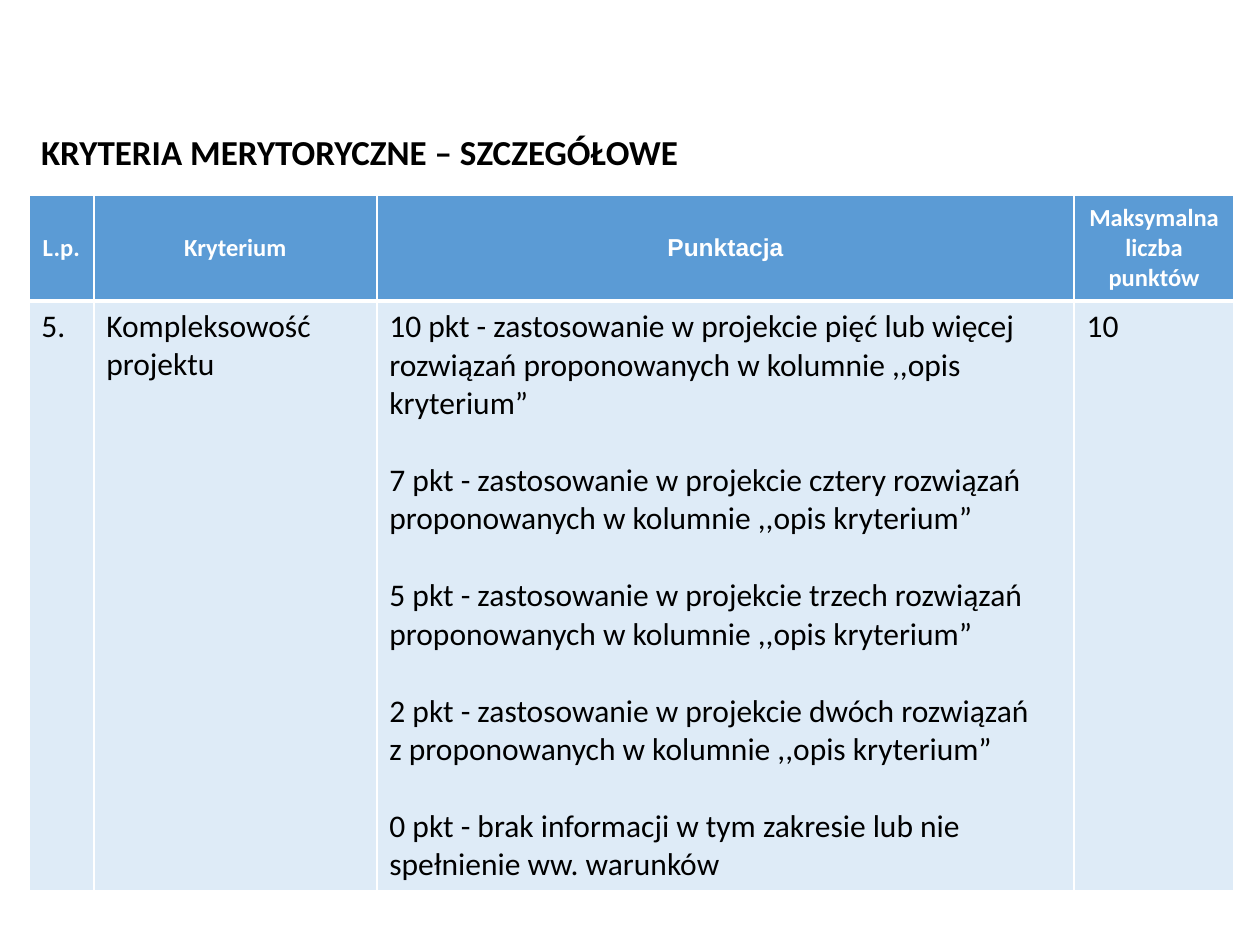
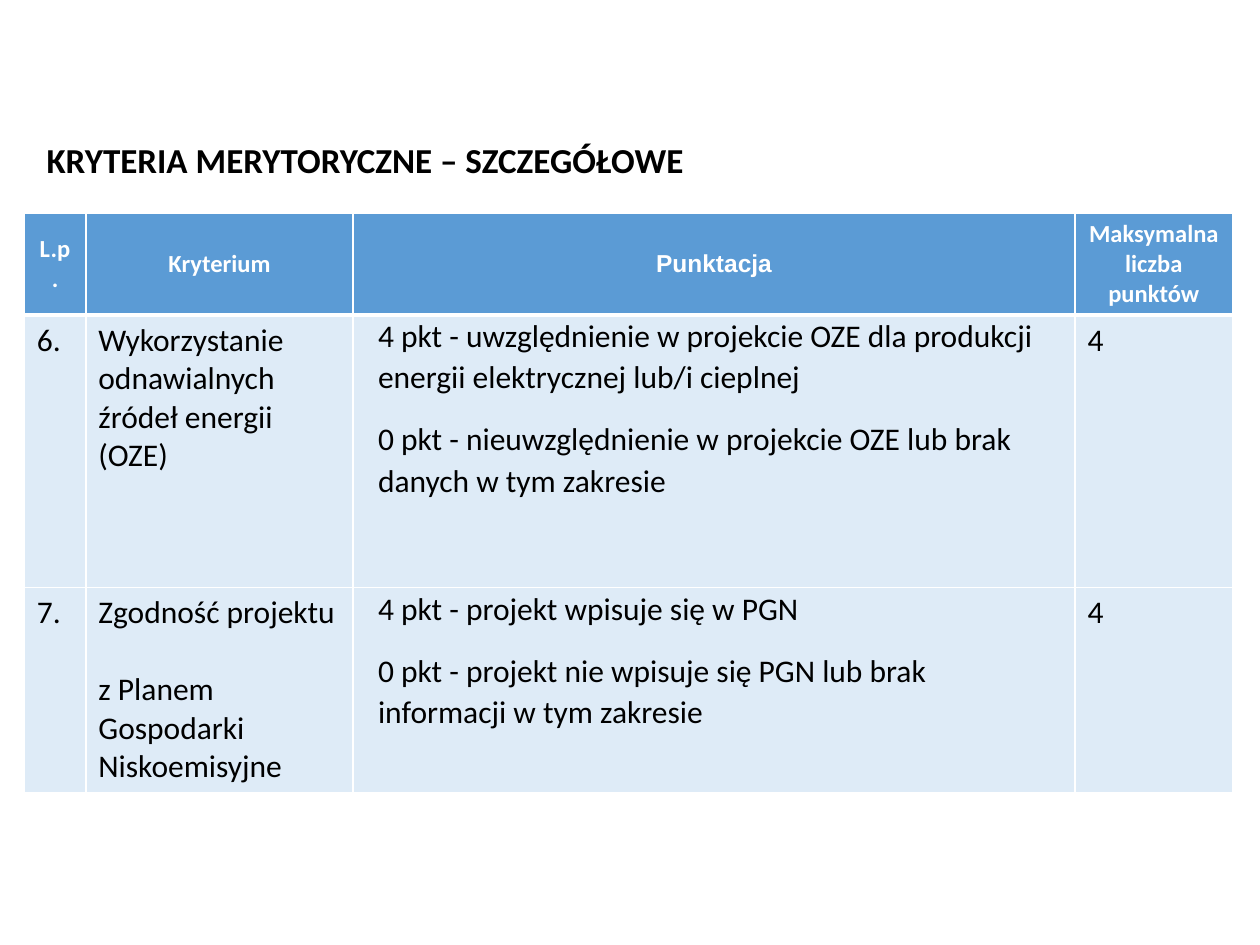
from lxml.etree import SubElement
from pptx import Presentation
from pptx.dml.color import RGBColor
from pptx.enum.text import MSO_ANCHOR, MSO_AUTO_SIZE, PP_ALIGN
from pptx.oxml.ns import qn
from pptx.util import Cm, Pt

WHITE = RGBColor(0xFF, 0xFF, 0xFF)
BLACK = RGBColor(0x00, 0x00, 0x00)
HEADER_BLUE = RGBColor(0x5B, 0x9B, 0xD5)
BODY_BLUE = RGBColor(0xDE, 0xEB, 0xF7)

TITLE = "KRYTERIA MERYTORYCZNE – SZCZEGÓŁOWE"
HEADERS = ["L.p.", "Kryterium", "Punktacja", "Maksymalna liczba punktów"]
SCORING_COLUMN = HEADERS.index("Punktacja")
BLANK_LINE = 22

PAGES = [
    {
        "title": (0.58, 2.49, 13.77),
        "table": (0.58, 3.94),
        "columns": [1.31, 5.71, 14.05, 3.23],
        "heights": [2.13, 11.86],
        "scoring": {"margins": (0.25, 0.13), "spacing": 1.0, "gap": BLANK_LINE},
        "rows": [
            [
                ["5."],
                ["Kompleksowość projektu"],
                [
                    "10 pkt - zastosowanie w projekcie pięć lub więcej\v"
                    "rozwiązań proponowanych w kolumnie ,,opis\vkryterium”",
                    "7 pkt - zastosowanie w projekcie cztery rozwiązań\v"
                    "proponowanych w kolumnie ,,opis kryterium”",
                    "5 pkt - zastosowanie w projekcie trzech rozwiązań\v"
                    "proponowanych w kolumnie ,,opis kryterium”",
                    "2 pkt - zastosowanie w projekcie dwóch rozwiązań\v"
                    "z proponowanych w kolumnie ,,opis kryterium”",
                    "0 pkt - brak informacji w tym zakresie lub nie\v"
                    "spełnienie ww. warunków",
                ],
                ["10"],
            ],
        ],
    },
    {
        "title": (0.69, 2.67, 13.46),
        "table": (0.49, 4.29),
        "columns": [1.24, 5.39, 14.55, 3.18],
        "heights": [2.06, 5.49, 4.14],
        "scoring": {"margins": (0.5, 0), "spacing": 1.07, "gap": 12},
        "rows": [
            [
                ["6."],
                ["Wykorzystanie odnawialnych źródeł energii (OZE)"],
                [
                    "4 pkt - uwzględnienie w projekcie OZE dla produkcji\v"
                    "energii elektrycznej lub/i cieplnej",
                    "0 pkt - nieuwzględnienie w projekcie OZE lub brak\v"
                    "danych w tym zakresie",
                ],
                ["4"],
            ],
            [
                ["7."],
                ["Zgodność projektu", "z Planem Gospodarki Niskoemisyjne"],
                [
                    "4 pkt - projekt wpisuje się w PGN",
                    "0 pkt - projekt nie wpisuje się PGN lub brak\v"
                    "informacji w tym zakresie",
                ],
                ["4"],
            ],
        ],
    },
]


def set_font(paragraph, size, color, bold, name="Calibri"):
    font = paragraph.font
    font.size = Pt(size)
    font.bold = bold
    font.name = name
    font.color.rgb = color


def set_borders(cell, top, bottom):
    properties = cell._tc.get_or_add_tcPr()
    for side, width in (("L", 1), ("R", 1), ("T", top), ("B", bottom)):
        line = SubElement(properties, qn(f"a:ln{side}"), w=str(Pt(width)))
        fill = SubElement(line, qn("a:solidFill"))
        SubElement(fill, qn("a:srgbClr"), val=str(WHITE))


deck = Presentation()
deck.slide_width = Cm(25.4)
deck.slide_height = Cm(19.05)

for content in PAGES:
    page = deck.slides.add_slide(deck.slide_layouts[6])

    left, top = content["table"]
    rows = [[[header] for header in HEADERS]] + content["rows"]
    frame = page.shapes.add_table(
        len(rows), len(HEADERS), Cm(left), Cm(top),
        Cm(sum(content["columns"])), Cm(sum(content["heights"])))
    table = frame.table
    for column, width in zip(table.columns, content["columns"]):
        column.width = Cm(width)
    for row, height in zip(table.rows, content["heights"]):
        row.height = Cm(height)

    for row_index, row_texts in enumerate(rows):
        is_header = row_index == 0
        for column_index, texts in enumerate(row_texts):
            is_scoring = column_index == SCORING_COLUMN
            cell = table.cell(row_index, column_index)
            set_borders(cell, 3 if row_index == 1 else 1, 3 if is_header else 1)
            cell.fill.solid()
            cell.fill.fore_color.rgb = HEADER_BLUE if is_header else BODY_BLUE
            cell.vertical_anchor = MSO_ANCHOR.MIDDLE if is_header else MSO_ANCHOR.TOP

            spacing, gap = 1.0, BLANK_LINE
            if is_scoring and not is_header:
                scoring = content["scoring"]
                spacing, gap = scoring["spacing"], scoring["gap"]
                side, edge = scoring["margins"]
                cell.margin_left = Cm(side)
                cell.margin_right = Cm(0)
                cell.margin_top = cell.margin_bottom = Cm(edge)

            for index, text in enumerate(texts):
                text_frame = cell.text_frame
                para = text_frame.add_paragraph() if index else text_frame.paragraphs[0]
                para.text = text
                para.line_spacing = spacing
                if index:
                    para.space_before = Pt(gap)
                if is_header:
                    para.alignment = PP_ALIGN.CENTER
                    set_font(para, 14, WHITE, True, "Arial" if is_scoring else "Calibri")
                else:
                    set_font(para, 18, BLACK, False)

    left, top, width = content["title"]
    box = page.shapes.add_textbox(Cm(left), Cm(top), Cm(width), Cm(1.11))
    box.text_frame.word_wrap = False
    box.text_frame.auto_size = MSO_AUTO_SIZE.SHAPE_TO_FIT_TEXT
    box.text_frame.vertical_anchor = MSO_ANCHOR.MIDDLE
    para = box.text_frame.paragraphs[0]
    para.text = TITLE
    set_font(para, 20, BLACK, True)

deck.save("out.pptx")
